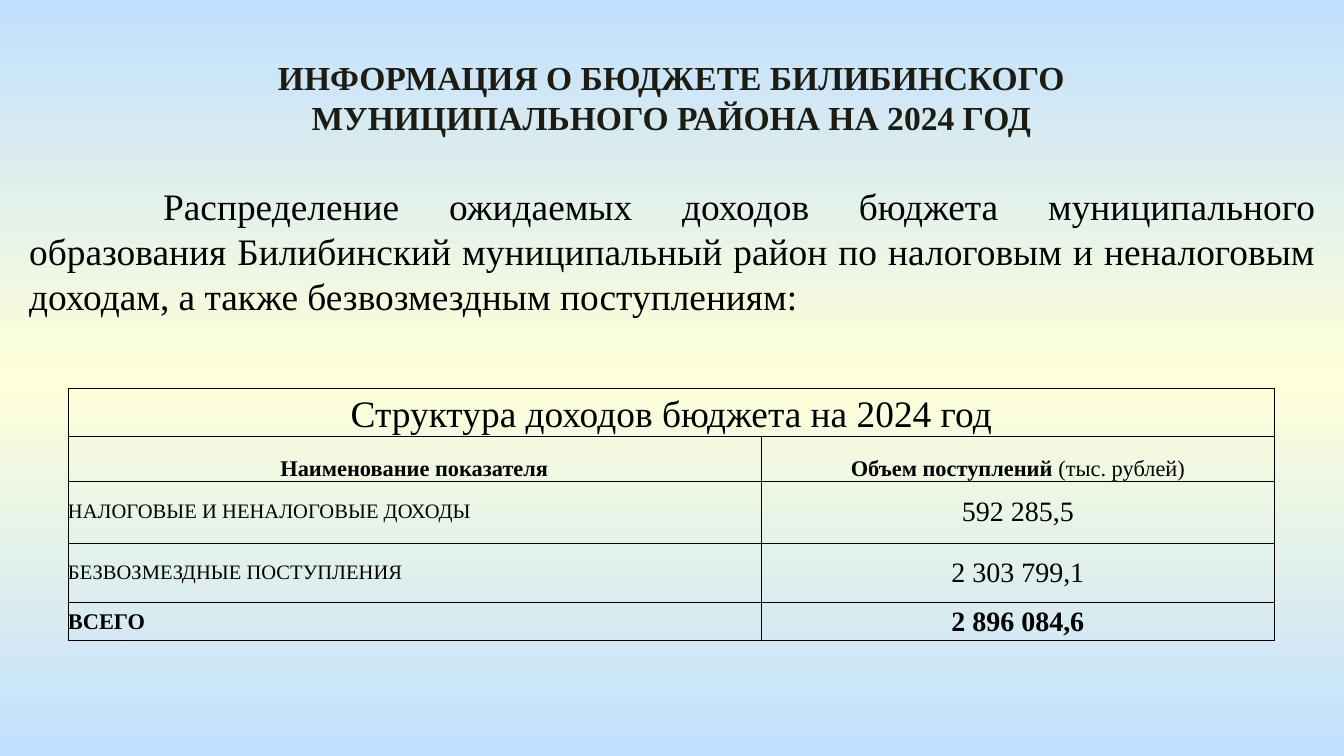
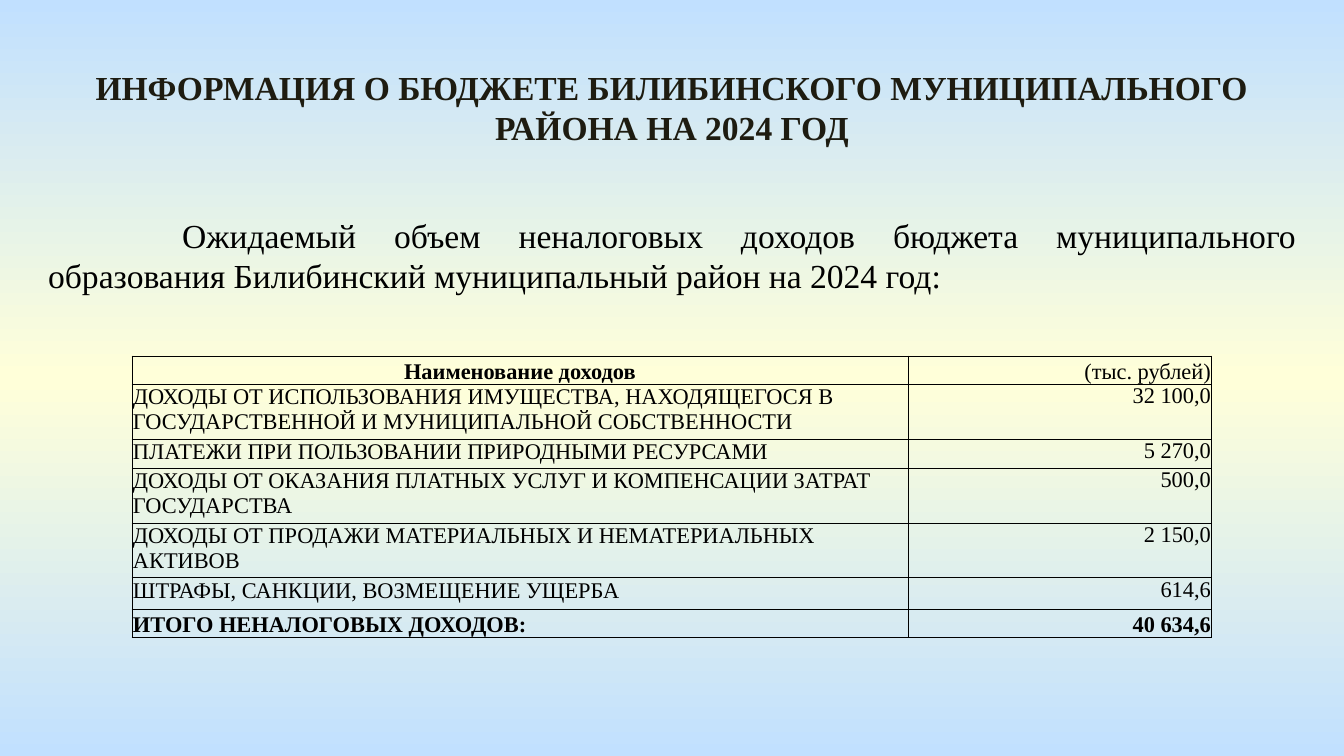
import copy

import pptx
import pptx.dml.color
import pptx.enum.shapes
import pptx.enum.text
import pptx.oxml
import pptx.oxml.ns
import pptx.util

ALIGN = pptx.enum.text.PP_ALIGN
ANCHOR = pptx.enum.text.MSO_ANCHOR
RGB = pptx.dml.color.RGBColor.from_string
qn = pptx.oxml.ns.qn

SCALE = 914400 / 134.4
SLIDE_SIZE = (1344, 756)
INTRO_INDENT = 134


class Theme:
    font = "Times New Roman"
    text = "000000"
    heading = "1E1C11"
    border = "000000"
    border_width = 0.5
    backdrop = ((0, "C1E0FF"), (0.5, "FFFFD9"), (1, "C1E0FF"))
    heading_size = 18
    caption_size = 20
    value_size = 15
    label_size = 12
    small_size = 11


HEADING = "ИНФОРМАЦИЯ О БЮДЖЕТЕ БИЛИБИНСКОГО МУНИЦИПАЛЬНОГО РАЙОНА НА 2024 ГОД"


def cell(text, size=Theme.label_size, align=ALIGN.LEFT, bold=False, plain_tail=""):
    return text, size, align, bold, plain_tail


def structure_row(height, label, value, bold=False):
    label_size = Theme.label_size if bold else Theme.small_size
    return height, ANCHOR.MIDDLE, [
        cell(label, label_size, bold=bold),
        cell(value, Theme.value_size, ALIGN.CENTER, bold),
    ]


def income_row(height, label, value, bold=False):
    anchor = ANCHOR.BOTTOM if bold else ANCHOR.TOP
    return height, anchor, [cell(label, bold=bold), cell(value, align=ALIGN.RIGHT, bold=bold)]


SLIDES = [
    {
        "heading_box": (152, 50, 1039, 95),
        "intro_box": (16, 177, 1313, 149),
        "intro": "Распределение ожидаемых доходов бюджета муниципального образования "
                 "Билибинский муниципальный район по налоговым и неналоговым доходам, "
                 "а также безвозмездным поступлениям:",
        "intro_size": 20,
        "intro_backed": True,
        "table_origin": (68, 388),
        "columns": (693, 514),
        "insets": ((0, 0, 0, 0), (0, 0, 0, 0)),
        "rows": [
            (48, ANCHOR.BOTTOM, [
                cell("Структура доходов бюджета на 2024 год", Theme.caption_size, ALIGN.CENTER),
            ]),
            (45, ANCHOR.BOTTOM, [
                cell("Наименование показателя", align=ALIGN.CENTER, bold=True),
                cell("Объем поступлений ", align=ALIGN.CENTER, bold=True,
                     plain_tail="(тыс. рублей)"),
            ]),
            structure_row(62, "НАЛОГОВЫЕ И НЕНАЛОГОВЫЕ ДОХОДЫ", "592 285,5"),
            structure_row(60, "БЕЗВОЗМЕЗДНЫЕ ПОСТУПЛЕНИЯ", "2 303 799,1"),
            structure_row(38, "ВСЕГО", "2 896 084,6", bold=True),
        ],
    },
    {
        "heading_box": (53, 60, 1238, 95),
        "intro_box": (35, 208, 1275, 95),
        "intro": "Ожидаемый объем неналоговых доходов бюджета муниципального образования "
                 "Билибинский муниципальный район на 2024 год:",
        "intro_size": 18,
        "intro_backed": False,
        "table_origin": (132, 356),
        "columns": (776, 303),
        "insets": ((1, 1, 1, 0), (0, 0, 0, 0)),
        "rows": [
            (28, ANCHOR.BOTTOM, [
                cell("Наименование доходов", align=ALIGN.CENTER, bold=True),
                cell("(тыс. рублей)", align=ALIGN.RIGHT),
            ]),
            income_row(55, "ДОХОДЫ ОТ ИСПОЛЬЗОВАНИЯ ИМУЩЕСТВА, НАХОДЯЩЕГОСЯ В "
                           "ГОСУДАРСТВЕННОЙ И МУНИЦИПАЛЬНОЙ СОБСТВЕННОСТИ", "32 100,0"),
            income_row(29, "ПЛАТЕЖИ ПРИ ПОЛЬЗОВАНИИ ПРИРОДНЫМИ РЕСУРСАМИ", "5 270,0"),
            income_row(55, "ДОХОДЫ ОТ ОКАЗАНИЯ ПЛАТНЫХ УСЛУГ И КОМПЕНСАЦИИ ЗАТРАТ "
                           "ГОСУДАРСТВА", "500,0"),
            income_row(54, "ДОХОДЫ ОТ ПРОДАЖИ МАТЕРИАЛЬНЫХ И НЕМАТЕРИАЛЬНЫХ АКТИВОВ",
                       "2 150,0"),
            income_row(32, "ШТРАФЫ, САНКЦИИ, ВОЗМЕЩЕНИЕ УЩЕРБА", "614,6"),
            income_row(27, "ИТОГО НЕНАЛОГОВЫХ ДОХОДОВ:", "40 634,6", bold=True),
        ],
    },
]


def px(length):
    return pptx.util.Emu(round(length * SCALE))


def px_all(lengths):
    return [px(length) for length in lengths]


def paint_backdrop(slide):
    fill = slide.background.fill
    fill.gradient()
    fill.gradient_angle = 270
    stops = next(slide.element.iter(qn("a:gsLst")))
    stops.insert(1, copy.deepcopy(stops[0]))
    for stop, (position, color) in zip(fill.gradient_stops, Theme.backdrop):
        stop.position = position
        stop.color.rgb = RGB(color)


def style_run(run, size, bold=False, color=Theme.text):
    run.font.name = Theme.font
    run.font.size = pptx.util.Pt(size)
    run.font.bold = bold
    run.font.color.rgb = RGB(color)


def write_block(block, text, size, align, bold=False, color=Theme.text):
    frame = block.text_frame
    frame.word_wrap = True
    frame.auto_size = pptx.enum.text.MSO_AUTO_SIZE.SHAPE_TO_FIT_TEXT
    frame.vertical_anchor = ANCHOR.TOP
    frame.text = text
    paragraph = frame.paragraphs[0]
    paragraph.alignment = align
    style_run(paragraph.runs[0], size, bold, color)
    return paragraph


def add_heading(slide, box):
    heading = slide.shapes.add_textbox(*px_all(box))
    write_block(heading, HEADING, Theme.heading_size, ALIGN.CENTER, True, Theme.heading)


def add_intro(slide, content):
    box = px_all(content["intro_box"])
    if content["intro_backed"]:
        intro = slide.shapes.add_shape(pptx.enum.shapes.MSO_SHAPE.RECTANGLE, *box)
        intro.shadow.inherit = False
        intro.line.fill.background()
        intro.element.remove(intro.element.find(qn("p:style")))
        intro.element.set("useBgFill", "1")
    else:
        intro = slide.shapes.add_textbox(*box)
    paragraph = write_block(intro, content["intro"], content["intro_size"], ALIGN.JUSTIFY)
    paragraph._p.get_or_add_pPr().set("indent", str(px(INTRO_INDENT)))


def draw_borders(table_cell):
    properties = table_cell._tc.get_or_add_tcPr()
    width = pptx.util.Pt(Theme.border_width)
    for side in "LRTB":
        properties.append(pptx.oxml.parse_xml(
            f'<a:ln{side} {pptx.oxml.ns.nsdecls("a")} w="{width}"><a:solidFill>'
            f'<a:srgbClr val="{Theme.border}"/></a:solidFill></a:ln{side}>'))


def fill_cell(table_cell, content, anchor):
    text, size, align, bold, plain_tail = content
    table_cell.vertical_anchor = anchor
    paragraph = table_cell.text_frame.paragraphs[0]
    paragraph.text = text
    paragraph.alignment = align
    style_run(paragraph.runs[0], size, bold)
    if plain_tail:
        tail = paragraph.add_run()
        tail.text = plain_tail
        style_run(tail, size)


def add_budget_table(slide, content):
    rows, columns = content["rows"], content["columns"]
    extent = (sum(columns), sum(row[0] for row in rows))
    budget = slide.shapes.add_table(
        len(rows), len(columns), *px_all(content["table_origin"] + extent)).table
    budget.first_row = budget.horz_banding = False
    for column, width in zip(budget.columns, columns):
        column.width = px(width)
    for index, (height, anchor, cells) in enumerate(rows):
        budget.rows[index].height = px(height)
        for table_cell, insets in zip(budget.rows[index].cells, content["insets"]):
            (table_cell.margin_left, table_cell.margin_top,
             table_cell.margin_right, table_cell.margin_bottom) = px_all(insets)
            draw_borders(table_cell)
            table_cell.fill.background()
        if len(cells) < len(columns):
            budget.cell(index, 0).merge(budget.cell(index, len(columns) - 1))
        for position, cell_content in enumerate(cells):
            fill_cell(budget.cell(index, position), cell_content, anchor)


def main():
    deck = pptx.Presentation()
    deck.slide_width, deck.slide_height = px_all(SLIDE_SIZE)
    for content in SLIDES:
        slide = deck.slides.add_slide(deck.slide_layouts[6])
        paint_backdrop(slide)
        add_intro(slide, content)
        add_heading(slide, content["heading_box"])
        add_budget_table(slide, content)
    deck.save("out.pptx")


if __name__ == "__main__":
    main()
